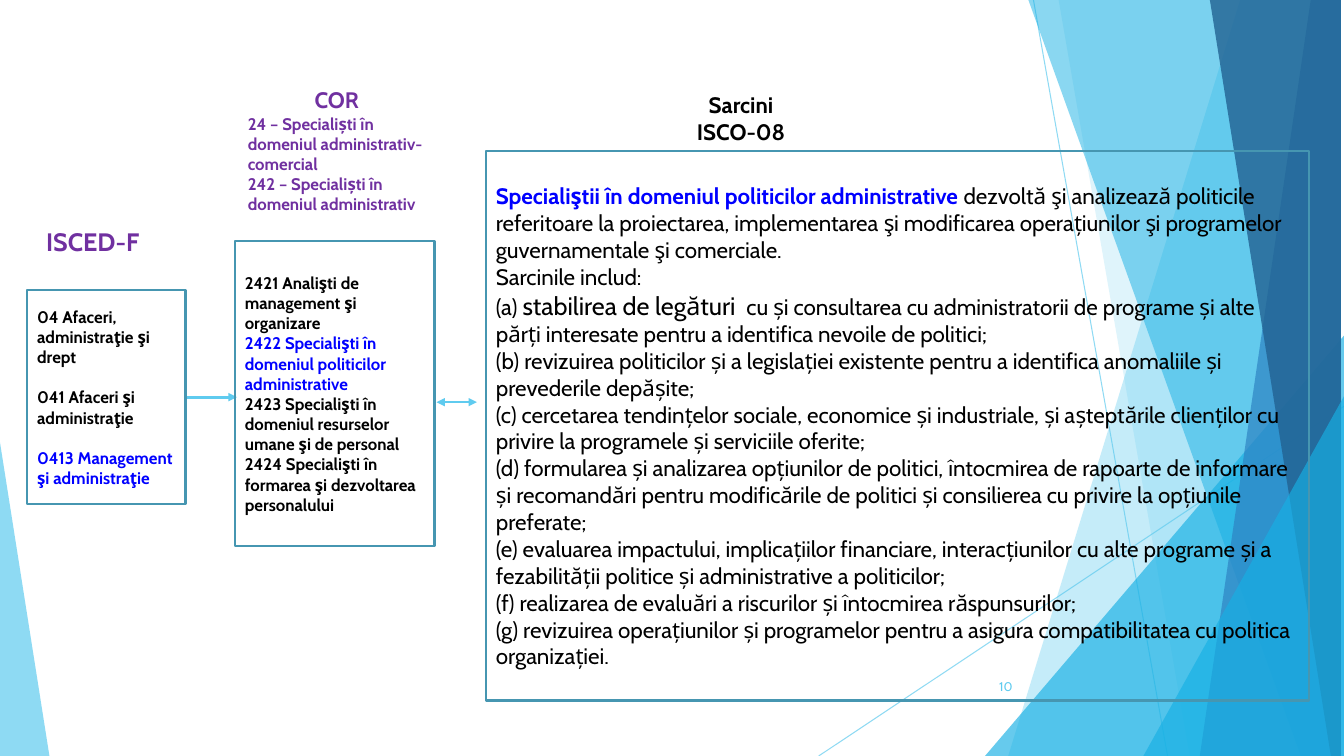
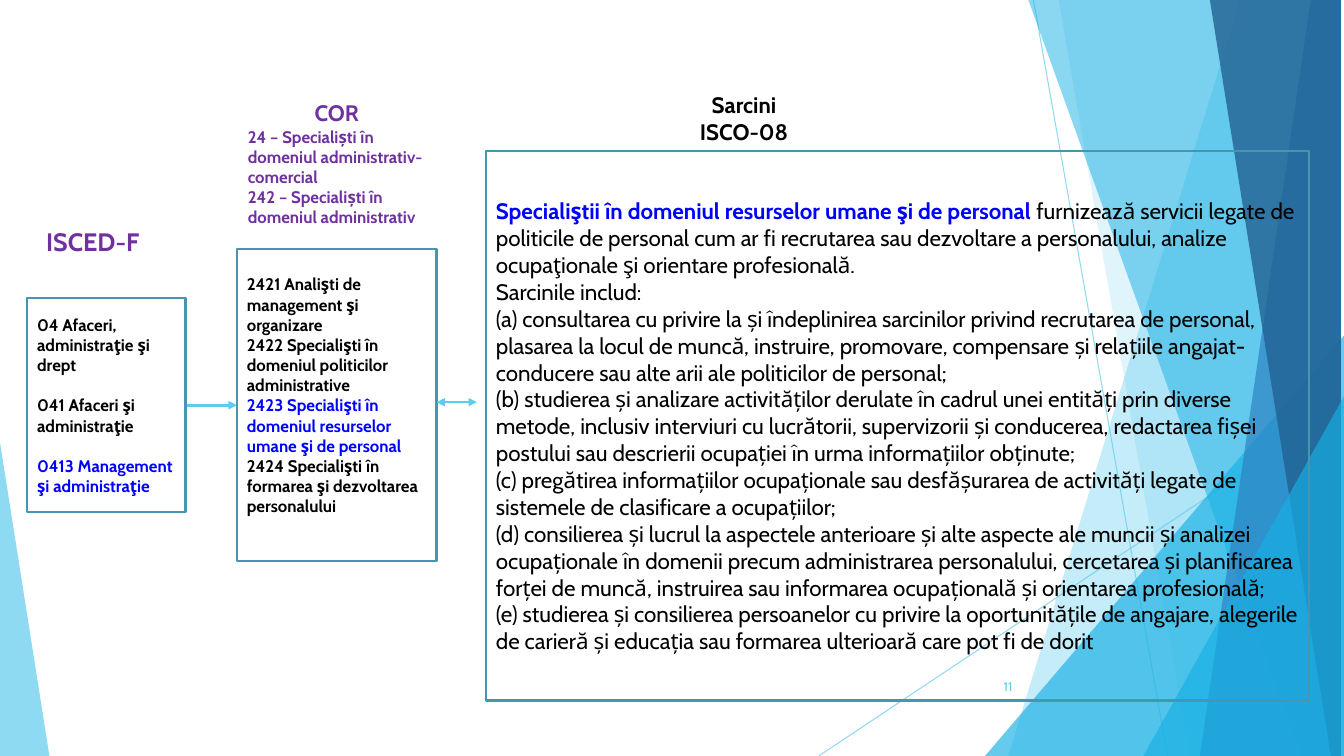
from collections import namedtuple

from lxml import etree
from pptx import Presentation
from pptx.dml.color import RGBColor
from pptx.enum.shapes import MSO_CONNECTOR, MSO_SHAPE
from pptx.enum.text import MSO_ANCHOR, PP_ALIGN
from pptx.oxml.ns import qn
from pptx.util import Inches, Pt

RECTANGLE = MSO_SHAPE.RECTANGLE
TRIANGLE = MSO_SHAPE.ISOSCELES_TRIANGLE
STRAIGHT = MSO_CONNECTOR.STRAIGHT
MIDDLE = MSO_ANCHOR.MIDDLE
LEFT, CENTER, RIGHT = PP_ALIGN.LEFT, PP_ALIGN.CENTER, PP_ALIGN.RIGHT

FONT = "Cabin"
COLORS = {
    "sky": "5FCBEF",
    "azure": "17B0E4",
    "blue": "2E83C3",
    "navy": "226292",
    "border": "4696B1",
    "heading": "7030A0",
    "highlight": "0000FF",
    "text": "000000",
    "white": "FFFFFF",
}

CELL = Inches(0.1)
COLUMNS, ROWS = 133.3, 75
Box = namedtuple("Box", "left top width height")

BAND_LINES = [((102.5, 0), (115.8, ROWS)), ((COLUMNS, 40.3), (81.2, ROWS))]
BANDS = [
    (122.8, 100.4, "sky", 36),
    (105, 118.3, "sky", 20),
    (Box(97.7, 33.3, 35.6, 41.7), 1, "azure", 66),
    (102.1, 129.1, "azure", 50),
    (130.3, 119.2, "blue", 70),
    (119.6, 131.8, "navy", 80),
    (Box(113.4, 39.3, 19.9, 35.7), 1, "azure", 66),
    (Box(0, 43.9, 4.9, 31.1), 0, "sky", 70),
]

FIELDS = [
    "04 Afaceri, administraţie şi drept",
    "041 Afaceri şi administraţie",
    "0413 Management şi administraţie",
]
GROUPS = [
    "24 – Specialiști în domeniul administrativ-comercial",
    "242 – Specialiști în domeniul administrativ",
]
OCCUPATIONS = [
    "2421 Analişti de management şi organizare",
    "2422 Specialişti în domeniul politicilor administrative",
    "2423 Specialişti în domeniul resurselor umane şi de personal",
    "2424 Specialişti în formarea şi dezvoltarea personalului",
]

SLIDES = [
    {
        "number": "10",
        "fields": Box(2.7, 28.8, 15.7, 21.2),
        "groups": Box(23.6, 8.8, 19.6, 12.2),
        "occupations": Box(23.3, 23.9, 19.8, 30.3),
        "occupations_lift": 0,
        "tasks_title": Box(63.7, 8.8, 19.6, 5.9),
        "highlighted": 1,
        "lead": "Specialiştii în domeniul politicilor administrative ",
        "summary": "dezvoltă şi analizează politicile referitoare la proiectarea, "
                   "implementarea şi modificarea operațiunilor şi programelor "
                   "guvernamentale şi comerciale.",
        "tasks": [
            [("(a) ", {}), ("stabilirea de legături ", {"size": 18}),
             (" cu și consultarea cu administratorii de programe și alte părți "
              "interesate pentru a identifica nevoile de politici;", {})],
            "(b) revizuirea politicilor și a legislației existente pentru a identifica "
            "anomaliile și prevederile depășite;",
            "(c) cercetarea tendințelor sociale, economice și industriale, și "
            "așteptările clienților cu privire la programele și serviciile oferite;",
            "(d) formularea și analizarea opțiunilor de politici, întocmirea de "
            "rapoarte de informare și recomandări pentru modificările de politici și "
            "consilierea cu privire la opțiunile preferate;",
            "(e) evaluarea impactului, implicațiilor financiare, interacțiunilor cu "
            "alte programe și a fezabilității politice și administrative a politicilor;",
            "(f) realizarea de evaluări a riscurilor și întocmirea răspunsurilor;",
            "(g) revizuirea operațiunilor și programelor pentru a asigura "
            "compatibilitatea cu politica organizației.",
        ],
    },
    {
        "number": "11",
        "fields": Box(2.7, 29.6, 15.7, 21.2),
        "groups": Box(23.6, 8.9, 19.6, 14.6),
        "occupations": Box(23.5, 24.7, 19.8, 31),
        "occupations_lift": 2,
        "tasks_title": Box(64, 8.8, 19.6, 5.9),
        "highlighted": 2,
        "lead": "Specialiştii în domeniul resurselor umane şi de personal",
        "summary": " furnizează servicii legate de politicile de personal cum ar fi "
                   "recrutarea sau dezvoltare a personalului, analize ocupaţionale şi "
                   "orientare profesională.",
        "tasks": [
            "(a) consultarea cu privire la și îndeplinirea sarcinilor privind "
            "recrutarea de personal, plasarea la locul de muncă, instruire, promovare, "
            "compensare și relațiile angajat-conducere sau alte arii ale politicilor "
            "de personal;",
            "(b) studierea și analizare activităților derulate în cadrul unei entități "
            "prin diverse metode, inclusiv interviuri cu lucrătorii, supervizorii și "
            "conducerea, redactarea fișei postului sau descrierii ocupației în urma "
            "informațiilor obținute;",
            "(c) pregătirea informațiilor ocupaționale sau desfășurarea de activități "
            "legate de sistemele de clasificare a ocupațiilor;",
            "(d) consilierea și lucrul la aspectele anterioare și alte aspecte ale "
            "muncii și analizei ocupaționale în domenii precum administrarea "
            "personalului, cercetarea și planificarea forței de muncă, instruirea sau "
            "informarea ocupațională și orientarea profesională;",
            "(e) studierea și consilierea persoanelor cu privire la oportunitățile de "
            "angajare, alegerile de carieră și educația sau formarea ulterioară care "
            "pot fi de dorit",
        ],
    },
]


def cells(*lengths):
    """Convert grid lengths to slide units."""
    return [round(length * CELL) for length in lengths]


def rgb(name):
    """Look up a palette colour."""
    return RGBColor.from_string(COLORS[name])


def set_alpha(shape, percent):
    """Make the colours of a shape partly transparent."""
    for color in list(shape.element.iter(qn("a:srgbClr"))):
        etree.SubElement(color, qn("a:alpha")).set("val", str(percent * 1000))


def style_font(font, size=None, color=None, bold=None):
    """Apply the given font settings."""
    if size is not None:
        font.size = Pt(size)
    if color is not None:
        font.color.rgb = rgb(color)
    if bold is not None:
        font.bold = bold


def write(shape, paragraphs, align=LEFT, gap=0, **base):
    """Fill a shape with paragraphs given as (content, style) pairs."""
    frame = shape.text_frame
    frame.word_wrap = True
    frame.vertical_anchor = MIDDLE
    for index, (content, style) in enumerate(paragraphs):
        paragraph = frame.add_paragraph() if index else frame.paragraphs[0]
        settings = {"align": align, **base, **style}
        paragraph.alignment = settings.pop("align")
        if index and gap:
            paragraph.space_before = Pt(gap)
        paragraph.font.name = FONT
        style_font(paragraph.font, **settings)
        runs = [(content, {})] if isinstance(content, str) else content
        for text, run_style in runs:
            run = paragraph.add_run()
            run.text = text
            style_font(run.font, **run_style)


def add_panel(slide, box, fill=None, border=None):
    """Add a rectangle with an optional fill and border."""
    shape = slide.shapes.add_shape(RECTANGLE, *cells(*box))
    shape.shadow.inherit = False
    if fill:
        shape.fill.solid()
        shape.fill.fore_color.rgb = rgb(fill)
    else:
        shape.fill.background()
    if border:
        shape.line.color.rgb = rgb(border)
        shape.line.width = Pt(1.5)
    else:
        shape.line.fill.background()
    return shape


def add_label(slide, box, lines, **style):
    """Add a text box with one paragraph for each line."""
    label = slide.shapes.add_textbox(*cells(*box))
    write(label, [(line, {}) for line in lines], **style)


def add_line(slide, start, end, width, arrows=()):
    """Add a straight line with arrowheads at the named ends."""
    connector = slide.shapes.add_connector(STRAIGHT, *cells(*start, *end))
    connector.line.color.rgb = rgb("sky")
    connector.line.width = Pt(width)
    line = connector.get_or_add_ln()
    for arrow in arrows:
        etree.SubElement(line, qn(f"a:{arrow}")).set("type", "triangle")
    etree.SubElement(connector.element.spPr, qn("a:effectLst"))
    return connector


def add_band(slide, top, bottom):
    """Add a band from a slanted left edge to the right slide edge."""
    builder = slide.shapes.build_freeform(top, 0, scale=CELL)
    builder.add_line_segments([(COLUMNS, 0), (COLUMNS, ROWS), (bottom, ROWS)])
    return builder.convert_to_shape()


def add_triangle(slide, box, apex):
    """Add a triangle with its apex at a share of its width."""
    triangle = slide.shapes.add_shape(TRIANGLE, *cells(*box))
    triangle.adjustments[0] = apex
    return triangle


def decorate_layout(layout, slide):
    """Draw the shared facets and move them to the layout."""
    for placeholder in list(layout.placeholders):
        layout.shapes.element.remove(placeholder.element)
    facets = [add_line(slide, start, end, 0.75) for start, end in BAND_LINES]
    for line in facets:
        set_alpha(line, 70)
    for first, second, color, alpha in BANDS:
        draw = add_triangle if isinstance(first, Box) else add_band
        facet = draw(slide, first, second)
        facet.shadow.inherit = False
        facet.fill.solid()
        facet.fill.fore_color.rgb = rgb(color)
        facet.line.fill.background()
        set_alpha(facet, alpha)
        facets.append(facet)
    for facet in facets:
        layout.shapes.element.append(facet.element)


def draw_fields(slide, box):
    """Draw the ISCED-F column and its arrow to the occupations."""
    add_label(slide, Box(box.left, 21, 13, 5.9), ["ISCED-F"],
              align=CENTER, size=18, color="heading", bold=True)
    styles = [{}, {}, {"color": "highlight"}]
    write(add_panel(slide, box, border="border"), list(zip(FIELDS, styles)),
          gap=14.4, size=12, color="text", bold=True)
    middle = box.top + box.height / 2
    right = box.left + box.width + 0.1
    add_line(slide, (right, middle), (right + 5, middle), 0, ["tailEnd"])


def draw_occupations(slide, heading_box, box, highlighted, lift):
    """Draw the COR column with one occupation highlighted."""
    panel = add_panel(slide, box, border="border")
    panel.text_frame.margin_bottom += cells(lift)[0]
    write(panel, [(name, {"color": "highlight"} if index == highlighted else {})
                  for index, name in enumerate(OCCUPATIONS)],
          size=12, color="text", bold=True)
    heading = [("COR", {"align": CENTER, "size": 16})]
    write(add_panel(slide, heading_box, fill="white"),
          heading + [(group, {}) for group in GROUPS],
          size=12, color="heading", bold=True)
    add_line(slide, (43.3, 39.9), (47.3, 39.9), 1, ["headEnd", "tailEnd"])


def draw_tasks(slide, title_box, box, content):
    """Draw the ISCO-08 task description."""
    lead = {"color": "highlight", "bold": True}
    opening = [(content["lead"], lead), (content["summary"], {})]
    paragraphs = [opening, "Sarcinile includ:", *content["tasks"]]
    write(add_panel(slide, box, border="border"),
          [(paragraph, {}) for paragraph in paragraphs],
          size=16, color="text", bold=False)
    add_label(slide, title_box, ["Sarcini", "ISCO-08"],
              align=CENTER, size=16, color="text", bold=True)


def draw_slide(slide, content):
    """Place the three columns and the slide number."""
    add_label(slide, Box(93.9, 66.1, 7.5, 4), [content["number"]],
              align=RIGHT, size=9, color="sky")
    draw_fields(slide, content["fields"])
    draw_tasks(slide, content["tasks_title"], Box(48.2, 15, 81.6, 54.5), content)
    draw_occupations(slide, content["groups"], content["occupations"],
                     content["highlighted"], content["occupations_lift"])


def main():
    """Build and save the presentation."""
    presentation = Presentation()
    presentation.slide_width, presentation.slide_height = cells(COLUMNS, ROWS)
    layout = presentation.slide_layouts[6]
    slides = [presentation.slides.add_slide(layout) for _ in SLIDES]
    decorate_layout(layout, slides[0])
    for slide, content in zip(slides, SLIDES):
        draw_slide(slide, content)
    presentation.save("out.pptx")


if __name__ == "__main__":
    main()
